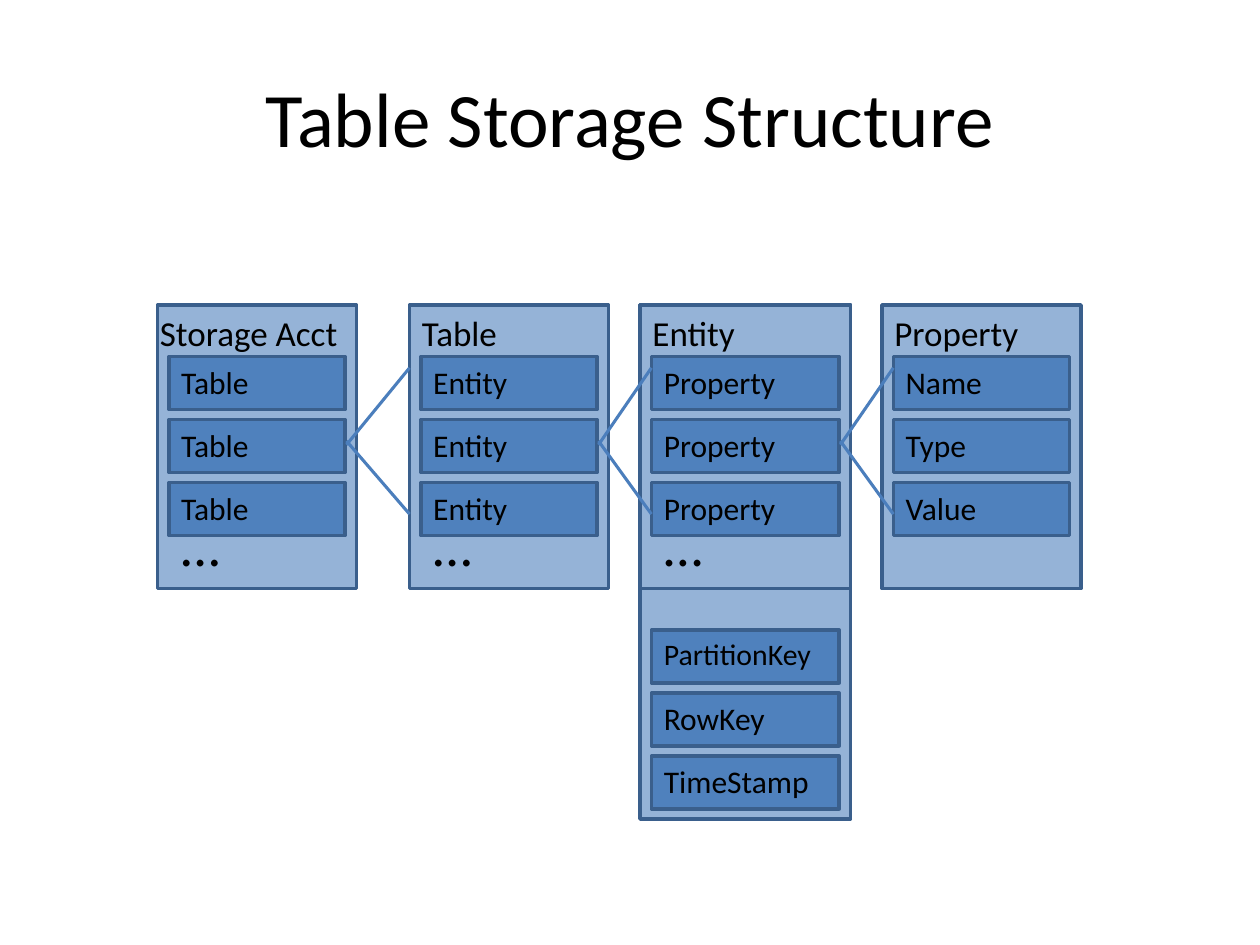
"""Build the Table Storage Structure slide."""
from dataclasses import dataclass

from lxml.etree import SubElement as Sub
from pptx import Presentation as Deck
from pptx.dml.color import RGBColor as Color
from pptx.enum.shapes import MSO_CONNECTOR as Link, MSO_SHAPE as Kind
from pptx.enum.text import MSO_ANCHOR as Anchor, MSO_AUTO_SIZE as Fit, PP_ALIGN as Align
from pptx.oxml.ns import qn
from pptx.util import Inches, Pt


@dataclass(frozen=True)
class Theme:
    font: str = "Calibri"
    ink: str = "000000"
    panel: str = "95B3D7"
    bar: str = "4F81BD"
    edge: str = "3A5F8C"
    link: str = "4B7EBC"
    title: int = 44
    head: int = 20
    item: int = 18
    small: int = 17
    dots: int = 32


def write(frame, text, *, size, font, color, align=Align.LEFT, anchor=Anchor.TOP):
    frame.word_wrap = True
    frame.vertical_anchor = anchor
    para = frame.paragraphs[0]
    para.alignment = align
    run = para.add_run()
    run.text = text
    run.font.size = Pt(size)
    run.font.name = font
    run.font.color.rgb = Color.from_string(color)


class Board:
    def __init__(self, slide, theme):
        self.slide = slide
        self.theme = theme
        self.base = dict(font=theme.font, color=theme.ink)

    def title(self, text, *area):
        head = self.slide.shapes.title
        head.left, head.top, head.width, head.height = map(Inches, area)
        write(head.text_frame, text, size=self.theme.title,
              align=Align.CENTER, anchor=Anchor.MIDDLE, **self.base)

    def rect(self, fill, *area):
        box = self.slide.shapes.add_shape(Kind.RECTANGLE, *map(Inches, area))
        box.shadow.inherit = False
        box.fill.solid()
        box.fill.fore_color.rgb = Color.from_string(fill)
        box.line.color.rgb = Color.from_string(self.theme.edge)
        box.line.width = Pt(2)

    def label(self, text, size, *area):
        box = self.slide.shapes.add_textbox(*map(Inches, area))
        write(box.text_frame, text, size=size, **self.base)
        box.text_frame.auto_size = Fit.SHAPE_TO_FIT_TEXT

    def bar(self, text, left, top, width, size=None):
        self.rect(self.theme.bar, left, top, width, 0.42)
        self.label(text, size or self.theme.item, left, top, width, 0.4)

    def line(self, *ends):
        link = self.slide.shapes.add_connector(Link.STRAIGHT, *map(Inches, ends))
        link.line.color.rgb = Color.from_string(self.theme.link)
        link.line.width = Pt(1.75)
        Sub(link._element.spPr, qn("a:effectLst"))

    def card(self, name, left, width, items, more=True, shift=0):
        self.rect(self.theme.panel, left, TOP, width, 2.25)
        self.label(name, self.theme.head, left - shift, TOP, width + shift, 0.44)
        inner, span = left + PAD, width - 2 * PAD
        for row, text in enumerate(items):
            self.bar(text, inner, 2.83 + row * STEP, span)
        if more:
            self.label("…", self.theme.dots, inner, 4, span, 0.64)

    def fan(self, start, end):
        self.line(start, 3.53, end, 2.92)
        self.line(start, 3.5, end, 4.08)


TOP, STEP, PAD = 2.42, 0.5, 0.09


def main():
    deck = Deck()
    deck.slide_width, deck.slide_height = Inches(10), Inches(7.5)
    theme = Theme()
    board = Board(deck.slides.add_slide(deck.slide_layouts[5]), theme)
    board.title("Table Storage Structure", 0.5, 0.3, 9, 1.25)

    board.rect(theme.panel, 5.08, TOP, 1.67, 4.08)
    keys = ("PartitionKey", theme.small), ("RowKey", None), ("TimeStamp", None)
    for row, (text, size) in enumerate(keys):
        board.bar(text, 5.08 + PAD, 5 + row * STEP, 1.67 - 2 * PAD, size)

    board.card("Storage Acct", 1.25, 1.58, ["Table"] * 3, shift=0.08)
    board.card("Table", 3.25, 1.58, ["Entity"] * 3)
    board.card("Entity", 5.08, 1.67, ["Property"] * 3)
    board.card("Property", 7, 1.58, ["Name", "Type", "Value"], more=False)

    for start, end in ((2.75, 3.25), (4.75, 5.17), (6.67, 7.09)):
        board.fan(start, end)
    deck.save("out.pptx")


if __name__ == "__main__":
    main()
